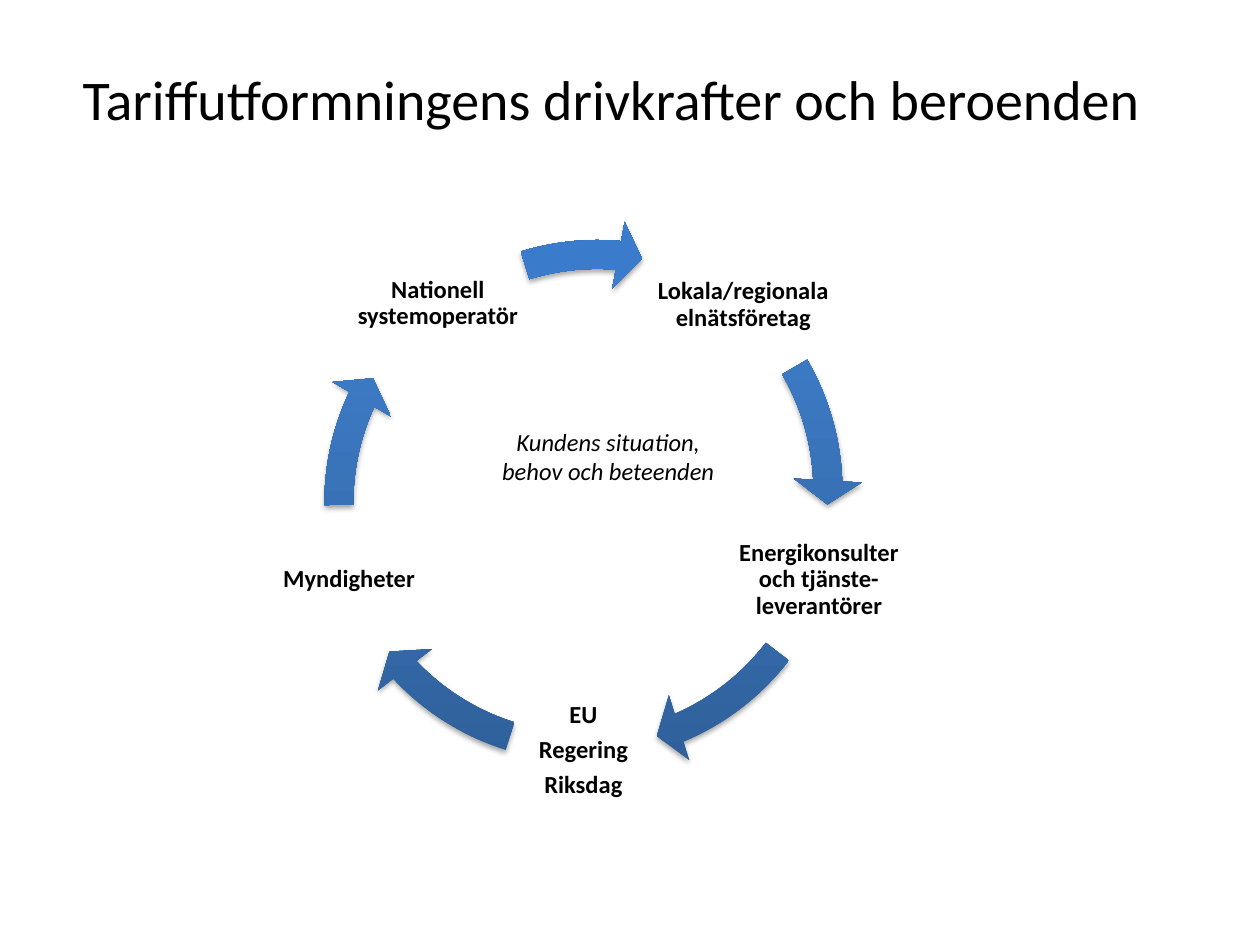
from copy import deepcopy
from dataclasses import dataclass

from lxml.etree import SubElement
from pptx import Presentation
from pptx.dml.color import RGBColor
from pptx.enum.shapes import MSO_SHAPE as Shape
from pptx.enum.text import MSO_ANCHOR as Anchor, PP_ALIGN as Align
from pptx.oxml.ns import qn
from pptx.util import Pt

COLOURS = {"text": "000000", "shadow": "000000", "deep": "2F5F99", "mid": "3D7CC7", "light": "3A7CCB"}
GRADIENT = [(0, "deep"), (0.8, "mid"), (1, "light")]
FONT = "Calibri"
RING_SIZE = 318.24
BAND, HEAD_ANGLE, HEAD_WIDTH = 0.052, 3.352, 0.061


@dataclass
class Label:
    text: str
    left: float
    top: float
    width: float
    height: float
    size: float = 14
    bold: bool = False
    italic: bool = False
    inset: float | None = None
    line_spacing: float | None = None
    space_after: float | None = None
    anchor: Anchor = Anchor.MIDDLE
    wrap: bool = True


@dataclass
class RingArrow:
    end: float
    start: float
    left: float = 174.24
    top: float = 128.16


def actor(text: str, left: float, top: float, width: float, height: float = 84.96) -> Label:
    """Return the label of one actor on the ring."""
    return Label(text, left, top, width, height, bold=True, inset=1.44, line_spacing=0.9, space_after=4.9)


TITLE = Label("Tariffutformningens drivkrafter och beroenden", 36, 23.76, 627.12, 64.8, size=32)
CENTRE = Label("Kundens situation, \nbehov och beteenden ", 272.16, 240.48, 154.08, 41.04,
               italic=True, anchor=Anchor.TOP, wrap=False)
ACTORS = [
    actor("Lokala/regionala elnätsföretag", 367.2, 139.68, 115.2, 69.12),
    actor("Energikonsulter och tjänste- leverantörer", 411.84, 288.72, 112.32),
    actor("EU\nRegering\nRiksdag", 290.88, 386.64, 84.96),
    actor("Myndigheter", 156.96, 288.72, 84.96),
    actor("Nationell systemoperatör", 200.88, 131.04, 98.64),
]
ARROWS = [
    RingArrow(214.656, 197.862, top=120.96),
    RingArrow(40.175, 22.509),
    RingArrow(82.139, 64.472),
    RingArrow(123.009, 107.688),
    RingArrow(164.988, 151.708, left=182.16, top=126),
]


def add_label(page, label: Label) -> None:
    """Draw one centred text box."""
    box = page.shapes.add_textbox(Pt(label.left), Pt(label.top), Pt(label.width), Pt(label.height))
    frame = box.text_frame
    frame.word_wrap = label.wrap
    frame.vertical_anchor = label.anchor
    if label.inset is not None:
        for side in ("left", "top", "right", "bottom"):
            setattr(frame, f"margin_{side}", Pt(label.inset))
    frame.text = label.text
    for para in frame.paragraphs:
        para.alignment = Align.CENTER
        if label.line_spacing is not None:
            para.line_spacing = label.line_spacing
        if label.space_after is not None:
            para.space_after = Pt(label.space_after)
        for span in para.runs:
            span.font.name = FONT
            span.font.size = Pt(label.size)
            span.font.bold = label.bold
            span.font.italic = label.italic
            span.font.color.rgb = RGBColor.from_string(COLOURS["text"])


def add_arrow(page, arrow: RingArrow) -> None:
    """Draw one curved arrow of the ring with its gradient and shadow."""
    shape = page.shapes.add_shape(Shape.CIRCULAR_ARROW, Pt(arrow.left), Pt(arrow.top),
                                  Pt(RING_SIZE), Pt(RING_SIZE))
    for index, value in enumerate((BAND, HEAD_ANGLE, arrow.end, arrow.start, HEAD_WIDTH)):
        shape.adjustments[index] = value
    shape.line.fill.background()
    shape.fill.gradient()
    shape.fill.gradient_angle = 90
    properties = shape._element.spPr
    stop_list = properties.find(".//" + qn("a:gsLst"))
    stop_list.append(deepcopy(stop_list[-1]))
    for stop, (position, colour) in zip(shape.fill.gradient_stops, GRADIENT):
        stop.position = position
        stop.color.rgb = RGBColor.from_string(COLOURS[colour])
    shape.shadow.inherit = False
    shadow = SubElement(properties.find(qn("a:effectLst")), qn("a:outerShdw"), blurRad=str(Pt(3.1)),
                        dist=str(Pt(1.8)), dir="5400000", rotWithShape="0")
    colour = SubElement(shadow, qn("a:srgbClr"), val=COLOURS["shadow"])
    SubElement(colour, qn("a:alpha"), val="35000")


def main() -> None:
    """Build the slide and save the deck."""
    deck = Presentation()
    deck.slide_width, deck.slide_height = Pt(720), Pt(540)
    page = deck.slides.add_slide(deck.slide_layouts[6])
    add_label(page, TITLE)
    for label, arrow in zip(ACTORS, ARROWS):
        add_label(page, label)
        add_arrow(page, arrow)
    add_label(page, CENTRE)
    deck.save("out.pptx")


if __name__ == "__main__":
    main()
